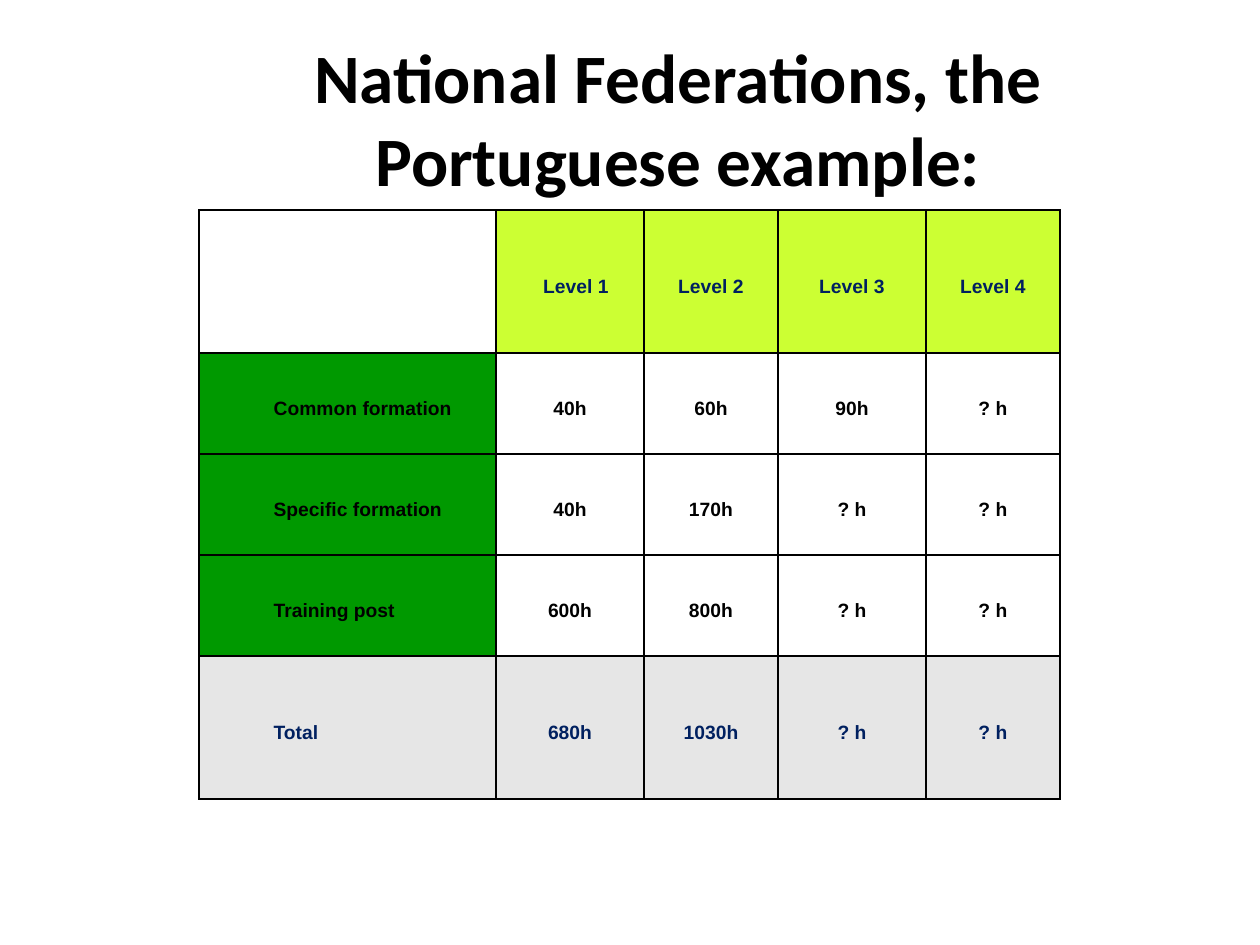
from lxml import etree
from pptx import Presentation
from pptx.dml.color import RGBColor
from pptx.enum.text import MSO_ANCHOR, PP_ALIGN
from pptx.oxml.ns import qn
from pptx.util import Pt

MIDDLE = MSO_ANCHOR.MIDDLE
LEFT, CENTER = PP_ALIGN.LEFT, PP_ALIGN.CENTER
PX = 914400 // 126

# Content
TITLE = "National Federations, the Portuguese example:"
ROWS = [
    ["", "Level 1", "Level 2", "Level 3", "Level 4"],
    ["Common formation", "40h", "60h", "90h", "? h"],
    ["Specific formation", "40h", "170h", "? h", "? h"],
    ["Training post", "600h", "800h", "? h", "? h"],
    ["Total", "680h", "1030h", "? h", "? h"],
]
COLORS = {"black": "000000", "navy": "002060", "lime": "CCFF33",
          "green": "009900", "gray": "E6E6E6"}

# Layout in px
TITLE_BOX = (158, 38, 1040, 158)
TABLE_POS = (199, 210)
COL_WIDTHS = [297, 148, 134, 148, 134]
ROW_HEIGHTS = [143, 101, 101, 101, 143]
LABEL_INDENT, LEVEL_1_INDENT = 62, 12


def color(name):
    return RGBColor.from_string(COLORS[name])


def write(tf, text, size=11, font="Arial", fg="black", align=CENTER,
          indent=0, spacing=None, after=None):
    tf.vertical_anchor = MIDDLE
    p = tf.paragraphs[0]
    p.alignment = align
    p.line_spacing = spacing
    p.space_after = after
    if indent:
        pPr = p._p.get_or_add_pPr()
        pPr.set("marL", str(indent * PX))
        pPr.set("indent", "0")
    r = p.add_run()
    r.text = text
    r.font.size, r.font.name, r.font.bold = Pt(size), font, True
    r.font.color.rgb = color(fg)


def add_borders(cell, fg="black", width=1):
    tcPr = cell._tc.get_or_add_tcPr()
    for side in ("lnL", "lnR", "lnT", "lnB"):
        ln = etree.SubElement(tcPr, qn(f"a:{side}"), w=str(Pt(width)))
        fill = etree.SubElement(ln, qn("a:solidFill"))
        etree.SubElement(fill, qn("a:srgbClr"), val=COLORS[fg])


def cell_fill(row, col):
    if row == len(ROWS) - 1:
        return "gray"
    if row == 0:
        return "lime" if col else None
    return None if col else "green"


def cell_indent(row, col):
    if col == 0:
        return LABEL_INDENT
    return LEVEL_1_INDENT if (row, col) == (0, 1) else 0


prs = Presentation()
prs.slide_width, prs.slide_height = 1260 * PX, 945 * PX
s = prs.slides.add_slide(prs.slide_layouts[5])

# Title
title = s.shapes.title
title.left, title.top, title.width, title.height = [v * PX for v in TITLE_BOX]
title.text_frame.word_wrap = True
write(title.text_frame, TITLE, size=39.6, font="Calibri")

# Hours table
size = (sum(COL_WIDTHS), sum(ROW_HEIGHTS))
table = s.shapes.add_table(len(ROWS), len(COL_WIDTHS),
                           *[v * PX for v in TABLE_POS + size]).table
table.first_row = table.horz_banding = False
for column, width in zip(table.columns, COL_WIDTHS):
    column.width = width * PX
for row, height in zip(table.rows, ROW_HEIGHTS):
    row.height = height * PX

for i, texts in enumerate(ROWS):
    for j, text in enumerate(texts):
        cell = table.cell(i, j)
        add_borders(cell)
        fill = cell_fill(i, j)
        if fill:
            cell.fill.solid()
            cell.fill.fore_color.rgb = color(fill)
        else:
            cell.fill.background()
        if text:
            cell.vertical_anchor = MIDDLE
            write(cell.text_frame, text, spacing=1.5,
                  fg="navy" if i in (0, len(ROWS) - 1) else "black",
                  align=CENTER if j else LEFT,
                  indent=cell_indent(i, j),
                  after=Pt(8) if j == len(texts) - 1 else None)

prs.save("out.pptx")
